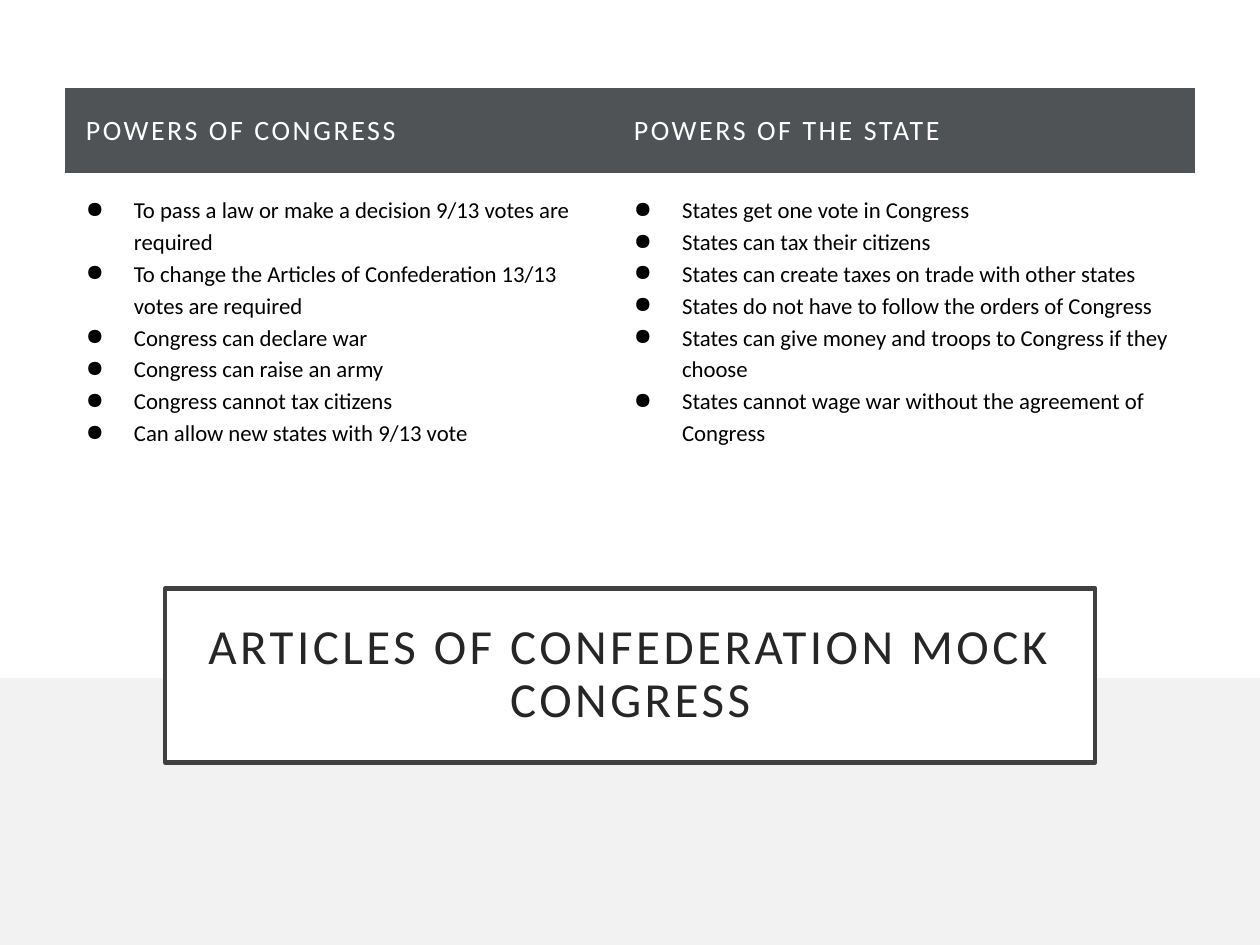
from dataclasses import dataclass

from lxml.etree import SubElement
from pptx import Presentation
from pptx.dml.color import RGBColor
from pptx.enum.shapes import MSO_SHAPE
from pptx.enum.text import MSO_ANCHOR, MSO_AUTO_SIZE, PP_ALIGN
from pptx.oxml.ns import qn
from pptx.util import Cm, Pt

NO_GRID_STYLE = "{2D5ABB26-0587-4C30-8999-92F81FD0307C}"

POWERS = {
    "POWERS OF CONGRESS": [
        "To pass a law or make a decision 9/13 votes are required",
        "To change the Articles of Confederation 13/13 votes are required",
        "Congress can declare war",
        "Congress can raise an army",
        "Congress cannot tax citizens",
        "Can allow new states with 9/13 vote",
    ],
    "POWERS OF THE STATE": [
        "States get one vote in Congress",
        "States can tax their citizens",
        "States can create taxes on trade with other states",
        "States do not have to follow the orders of Congress",
        "States can give money and troops to Congress if they choose",
        "States cannot wage war without the agreement of Congress",
    ],
}


@dataclass(frozen=True)
class TextStyle:
    size: float
    color: str
    tracking: float = 0
    line_spacing: float = 1.15


@dataclass(frozen=True)
class Theme:
    font: str = "Calibri"
    background: str = "F2F2F2"
    panel: str = "FFFFFF"
    frame: str = "404040"
    header_fill: str = "505356"
    title: TextStyle = TextStyle(28, "262626", 2, 0.9)
    header: TextStyle = TextStyle(16, "FFFFFF", 1.5)
    body: TextStyle = TextStyle(13, "000000")


class SlideBuilder:
    """Draws themed elements on the current slide."""

    def __init__(self, slide, theme):
        self.slide = slide
        self.theme = theme
        self.fill(slide.background.fill, theme.background)

    def fill(self, fill, color):
        fill.solid()
        fill.fore_color.rgb = RGBColor.from_string(color)

    def set_text(self, paragraph, text, style, bullet=None):
        paragraph.text = text
        paragraph.line_spacing = style.line_spacing
        paragraph.space_before = paragraph.space_after = Pt(0)
        properties = paragraph._p.get_or_add_pPr()
        if bullet:
            indent = Cm(0.97)
            properties.set("marL", str(indent))
            properties.set("indent", str(-indent))
            SubElement(properties, qn("a:buChar"), char=bullet)
        font = paragraph.font
        font.name = self.theme.font
        font.size = Pt(style.size)
        font.color.rgb = RGBColor.from_string(style.color)
        properties.find(qn("a:defRPr")).set("spc", str(int(style.tracking * 100)))

    def panel(self, left, top, width, height):
        panel = self.slide.shapes.add_shape(
            MSO_SHAPE.RECTANGLE, Cm(left), Cm(top), Cm(width), Cm(height))
        panel.shadow.inherit = False
        self.fill(panel.fill, self.theme.panel)
        panel.line.fill.background()
        self.slide.shapes.title.element.addprevious(panel.element)

    def title(self, text, left, top, width, height):
        title = self.slide.shapes.title
        title.left, title.top = Cm(left), Cm(top)
        title.width, title.height = Cm(width), Cm(height)
        self.fill(title.fill, self.theme.panel)
        self.fill(title.line.fill, self.theme.frame)
        title.line.width = Pt(2.5)
        frame = title.text_frame
        frame.word_wrap = True
        frame.auto_size = MSO_AUTO_SIZE.NONE
        frame.vertical_anchor = MSO_ANCHOR.MIDDLE
        frame.margin_left = frame.margin_right = Cm(0.76)
        frame.margin_top = frame.margin_bottom = Cm(0.51)
        paragraph = frame.paragraphs[0]
        self.set_text(paragraph, text, self.theme.title)
        paragraph.alignment = PP_ALIGN.CENTER

    def cell(self, cell, lines, style, bullet=None):
        cell.margin_left = cell.margin_right = Cm(0.41)
        cell.margin_top = cell.margin_bottom = Cm(0.41)
        frame = cell.text_frame
        for index, line in enumerate(lines):
            paragraph = frame.add_paragraph() if index else frame.paragraphs[0]
            self.set_text(paragraph, line, style, bullet)

    def table(self, columns, left, top, widths, heights):
        table = self.slide.shapes.add_table(
            len(heights), len(widths), Cm(left), Cm(top),
            Cm(sum(widths)), Cm(sum(heights))).table
        table.horz_banding = False
        table._tbl.tblPr.find(qn("a:tableStyleId")).text = NO_GRID_STYLE
        for row, height in zip(table.rows, heights):
            row.height = Cm(height)
        for index, (heading, powers) in enumerate(columns.items()):
            table.columns[index].width = Cm(widths[index])
            header, body = table.cell(0, index), table.cell(1, index)
            self.cell(header, [heading], self.theme.header)
            self.fill(header.fill, self.theme.header_fill)
            self.cell(body, powers, self.theme.body, "●")
            body.fill.background()


def main():
    presentation = Presentation()
    presentation.slide_width, presentation.slide_height = Cm(25.4), Cm(19.05)
    slide = presentation.slides.add_slide(presentation.slide_layouts[5])
    builder = SlideBuilder(slide, Theme())
    builder.panel(0, 0, 25.4, 13.67)
    builder.title("ARTICLES OF CONFEDERATION MOCK CONGRESS", 3.33, 11.86, 18.75, 3.51)
    builder.table(POWERS, 1.32, 1.78, [11.05, 11.71], [1.7, 7.47])
    presentation.save("out.pptx")


if __name__ == "__main__":
    main()
